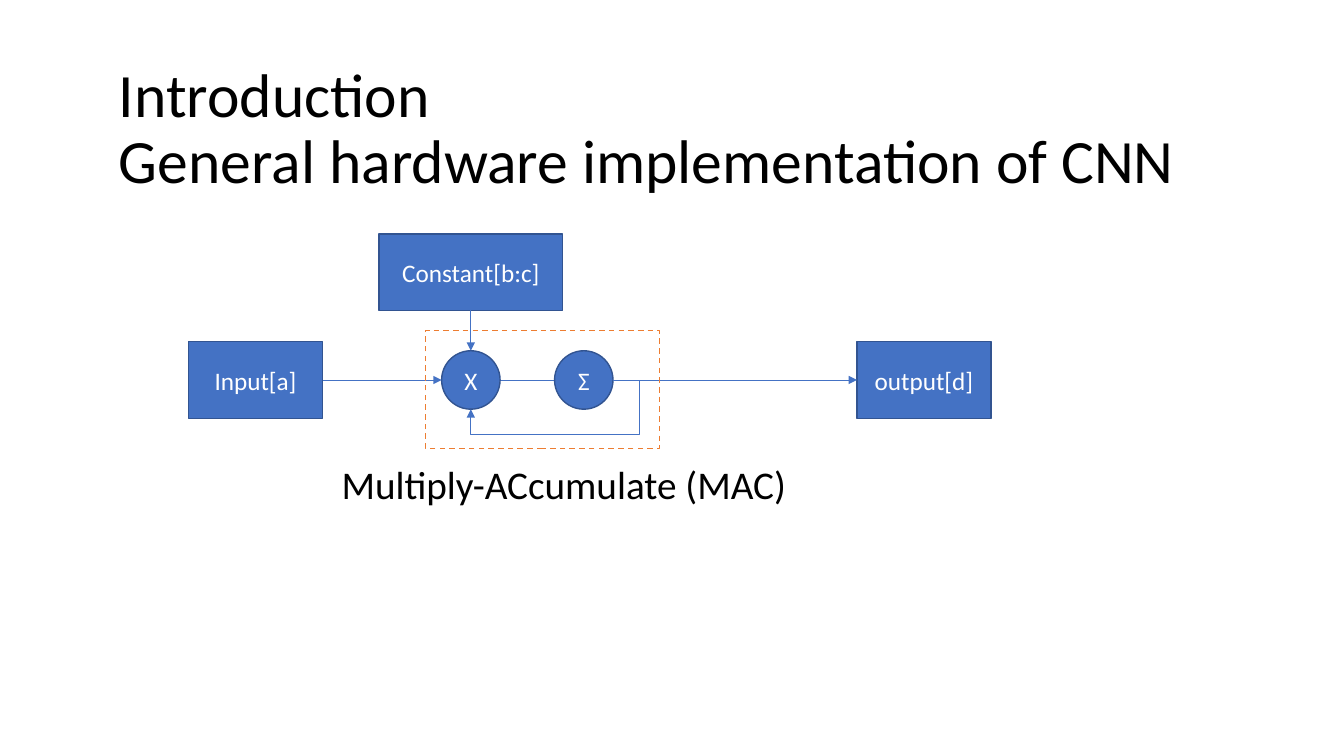
from lxml.etree import SubElement
from pptx import Presentation
from pptx.dml.color import RGBColor
from pptx.enum.dml import MSO_LINE
from pptx.enum.shapes import MSO_CONNECTOR, MSO_SHAPE
from pptx.enum.text import MSO_ANCHOR, MSO_AUTO_SIZE, PP_ALIGN
from pptx.oxml.ns import qn
from pptx.util import Inches, Pt

BLUE, NAVY, ORANGE = "4472C4", "325491", "ED7D31"
WHITE, BLACK = "FFFFFF", "000000"


def color(value):
    return RGBColor.from_string(value)


class Diagram:
    """Holds the style and the current slide."""

    font = "Calibri"

    def __init__(self, slide):
        self.slide = slide
        self.shapes = slide.shapes

    def add_text(self, frame, lines, size, ink, align, anchor):
        frame.word_wrap = True
        frame.auto_size = MSO_AUTO_SIZE.NONE
        frame.vertical_anchor = anchor
        paragraph = frame.paragraphs[0]
        paragraph.alignment = align
        for index, line in enumerate(lines):
            if index:
                paragraph.add_line_break()
            run = paragraph.add_run()
            run.text = line
            run.font.name = self.font
            run.font.size = Pt(size)
            run.font.color.rgb = color(ink)
        return paragraph

    def title(self, lines, left, top, width, height):
        heading = self.shapes.title
        heading.left, heading.top = Inches(left), Inches(top)
        heading.width, heading.height = Inches(width), Inches(height)
        self.add_text(heading.text_frame, lines, 44, BLACK,
                      PP_ALIGN.LEFT, MSO_ANCHOR.MIDDLE).line_spacing = 0.9

    def caption(self, words, left, top, width, height):
        box = self.shapes.add_textbox(Inches(left), Inches(top), Inches(width), Inches(height))
        self.add_text(box.text_frame, [words], 28, BLACK,
                      PP_ALIGN.LEFT, MSO_ANCHOR.TOP).line_spacing = 0.9

    def block(self, label, left, top, width, height, kind=MSO_SHAPE.RECTANGLE):
        block = self.shapes.add_shape(kind, Inches(left), Inches(top), Inches(width), Inches(height))
        block.shadow.inherit = False
        block.fill.solid()
        block.fill.fore_color.rgb = color(BLUE)
        block.line.color.rgb = color(NAVY)
        block.line.width = Pt(1)
        self.add_text(block.text_frame, [label], 18, WHITE, PP_ALIGN.CENTER, MSO_ANCHOR.MIDDLE)
        return block

    def frame(self, left, top, width, height):
        frame = self.shapes.add_shape(MSO_SHAPE.RECTANGLE, Inches(left), Inches(top),
                                      Inches(width), Inches(height))
        frame.shadow.inherit = False
        frame.fill.background()
        frame.line.color.rgb = color(ORANGE)
        frame.line.width = Pt(1)
        frame.line.dash_style = MSO_LINE.DASH

    def arrow(self, start, end, kind=MSO_CONNECTOR.STRAIGHT):
        arrow = self.shapes.add_connector(kind, *map(Inches, start + end))
        arrow.line.color.rgb = color(BLUE)
        arrow.line.width = Pt(0.5)
        properties = arrow._element.spPr
        SubElement(properties.find(qn("a:ln")), qn("a:tailEnd"), type="triangle")
        SubElement(properties, qn("a:effectLst"))
        return arrow

    def loop(self, start, end, right, bottom):
        """Arrow that leaves to the right, runs below and comes up to its end."""
        loop = self.arrow(start, end, MSO_CONNECTOR.ELBOW)
        geometry = loop._element.spPr.find(qn("a:prstGeom"))
        geometry.set("prst", "bentConnector4")
        guides = geometry.find(qn("a:avLst"))
        if guides is None:
            guides = SubElement(geometry, qn("a:avLst"))
        bends = ((right - start[0]) / (end[0] - start[0]),
                 (bottom - start[1]) / (end[1] - start[1]))
        for number, bend in enumerate(bends, 1):
            SubElement(guides, qn("a:gd"), name=f"adj{number}", fmla=f"val {round(bend * 100000)}")


def main():
    deck = Presentation()
    deck.slide_width, deck.slide_height = Inches(13.33), Inches(7.5)
    diagram = Diagram(deck.slides.add_slide(deck.slide_layouts[5]))

    # Title
    diagram.title(["Introduction", "General hardware implementation of CNN"], 1.08, 0.57, 11.5, 1.45)

    # Common axis and operator circles
    axis, circle = 3.77, 0.58
    multiply_left, sum_left = 4.38, 5.5
    multiply_x = multiply_left + circle / 2
    sum_right = sum_left + circle
    circle_top, circle_bottom = axis - circle / 2, axis + circle / 2
    box_height = 0.76
    box_top = axis - box_height / 2

    # Multiply and sum, with the link between them behind the circles
    constant = diagram.block("Constant[b:c]", 3.76, 2.32, 1.82, box_height)
    diagram.arrow((sum_right, axis), (multiply_left, axis))
    constant_arrow = diagram.arrow((multiply_x, 3.08), (multiply_x, circle_top))
    constant_arrow.begin_connect(constant, 2)
    for label, left in (("X", multiply_left), ("Σ", sum_left)):
        diagram.block(label, left, circle_top, circle, circle, MSO_SHAPE.OVAL)

    # Input and output
    input_box = diagram.block("Input[a]", 1.87, box_top, 1.33, box_height)
    output_box = diagram.block("output[d]", 8.5, box_top, 1.33, box_height)
    diagram.arrow((3.2, axis), (multiply_left, axis)).begin_connect(input_box, 3)
    diagram.arrow((sum_right, axis), (8.5, axis)).end_connect(output_box, 1)

    # Feedback loop and MAC outline
    diagram.loop((sum_right, axis), (multiply_x, circle_bottom), right=6.34, bottom=4.31)
    diagram.frame(4.22, 3.28, 2.32, 1.17)
    diagram.caption("Multiply-ACcumulate (MAC)", 3.29, 4.57, 6, 0.67)

    deck.save("out.pptx")


if __name__ == "__main__":
    main()
